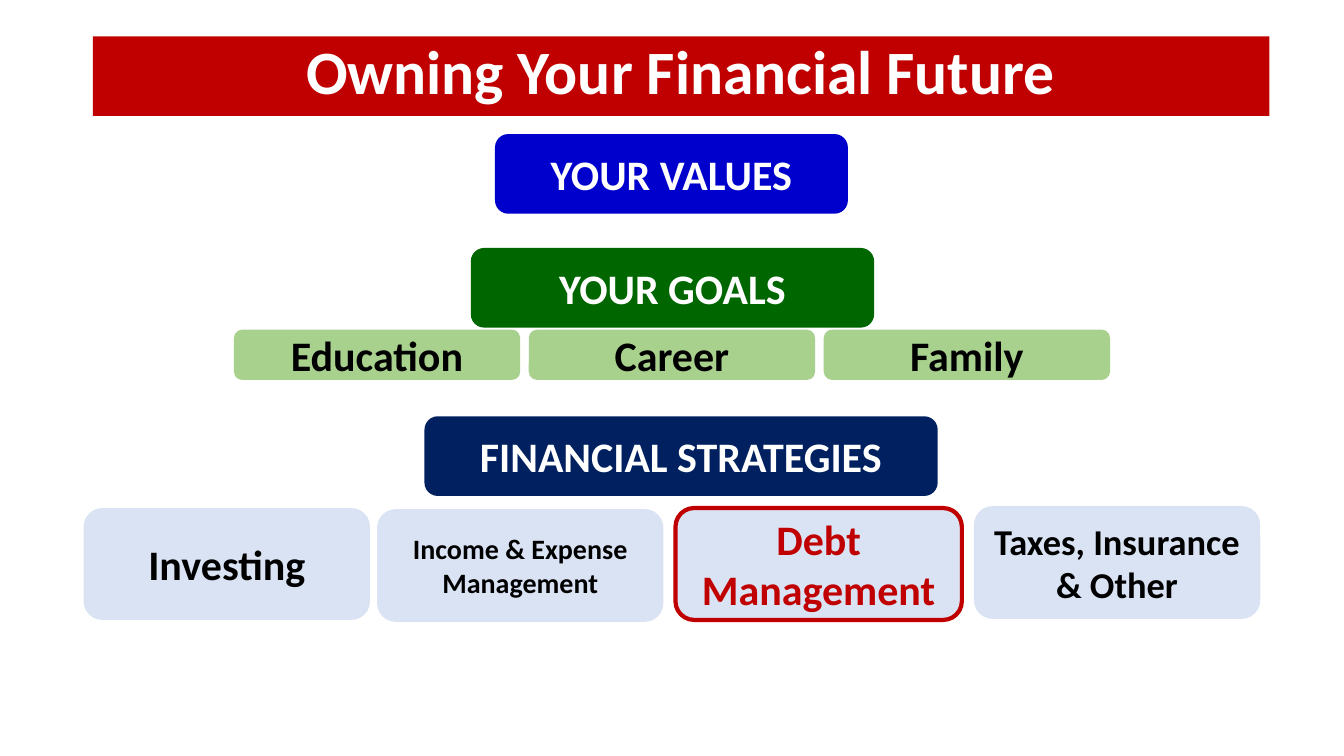
from pptx import Presentation
from pptx.dml.color import RGBColor
from pptx.enum import shapes, text
from pptx.util import Inches, Pt

WHITE, BLACK, RED = "FFFFFF", "000000", "C00000"
BLUE, GREEN, NAVY = "0000CC", "006600", "002060"
LIGHT_GREEN, LIGHT_BLUE = "A9D18E", "DAE3F3"


def paint(fill, color):
    fill.solid()
    fill.fore_color.rgb = RGBColor.from_string(color)


def write(shape, words, size, color, anchor=text.MSO_ANCHOR.MIDDLE):
    frame = shape.text_frame
    frame.text = words
    frame.word_wrap = True
    frame.auto_size = text.MSO_AUTO_SIZE.NONE
    frame.vertical_anchor = anchor
    para = frame.paragraphs[0]
    para.alignment = text.PP_ALIGN.CENTER
    para.font.name = "Calibri"
    para.font.size = Pt(size)
    para.font.bold = True
    paint(para.font.fill, color)


deck = Presentation()
deck.slide_width, deck.slide_height = Inches(13.33), Inches(7.5)
page = deck.slides.add_slide(deck.slide_layouts[5])

title = page.shapes.title
title.left, title.top = Inches(0.92), Inches(0.36)
title.width, title.height = Inches(11.67), Inches(0.79)
paint(title.fill, RED)
write(title, "Owning Your Financial Future", 44, WHITE, text.MSO_ANCHOR.TOP)
title.text_frame.paragraphs[0].line_spacing = 0.9

# label, left, top, width, height, fill, text size, text colour
boxes = [
    ("YOUR VALUES", 4.91, 1.33, 3.5, 0.79, BLUE, 30, WHITE),
    ("YOUR GOALS", 4.67, 2.46, 4, 0.79, GREEN, 30, WHITE),
    ("FINANCIAL STRATEGIES", 4.21, 4.13, 5.09, 0.79, NAVY, 30, WHITE),
]
for index, goal in enumerate(["Education", "Career", "Family"]):
    boxes.append((goal, 2.32 + index * 2.925, 3.27, 2.84, 0.5, LIGHT_GREEN, 30, BLACK))
for strategy, left, top, height, size, color in [
    ("Investing", 0.83, 5.04, 1.11, 30, BLACK),
    ("Income & Expense Management", 3.74, 5.05, 1.12, 20, BLACK),
    ("Debt Management", 6.7, 5.04, 1.11, 30, RED),
    ("Taxes, Insurance & Other", 9.66, 5.02, 1.12, 26, BLACK),
]:
    boxes.append((strategy, left, top, 2.84, height, LIGHT_BLUE, size, color))

for label, left, top, width, height, fill, size, color in boxes:
    box = page.shapes.add_shape(
        shapes.MSO_SHAPE.ROUNDED_RECTANGLE,
        Inches(left), Inches(top), Inches(width), Inches(height))
    box.shadow.inherit = False
    paint(box.fill, fill)
    if color == RED:
        paint(box.line.fill, RED)
        box.line.width = Pt(3)
    else:
        box.line.fill.background()
    write(box, label, size, color)

deck.save("out.pptx")
